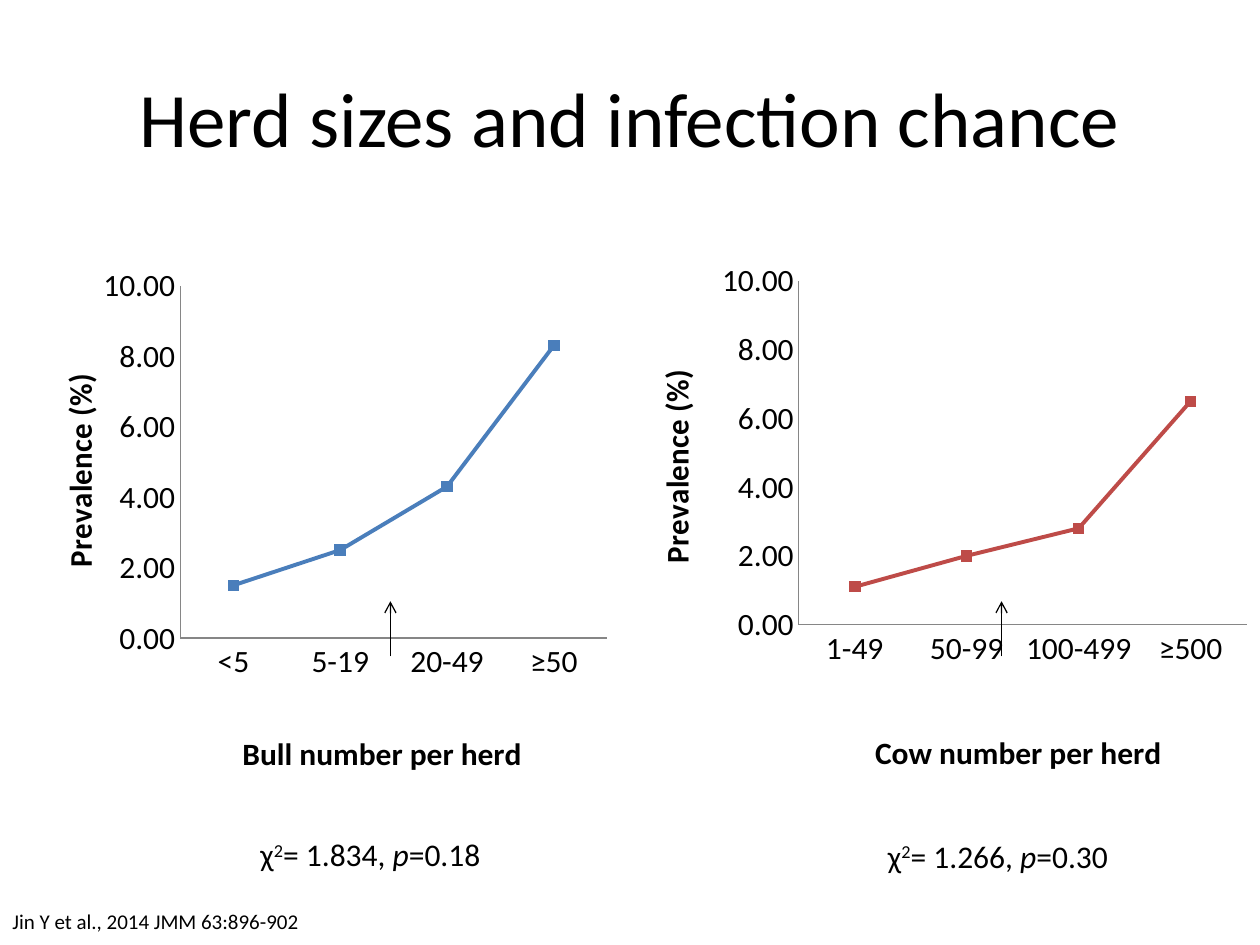
from dataclasses import dataclass
from lxml.etree import SubElement
from pptx import Presentation
from pptx.chart.data import CategoryChartData
from pptx.dml.color import RGBColor
from pptx.enum.chart import XL_CHART_TYPE, XL_MARKER_STYLE, XL_TICK_MARK
from pptx.enum.shapes import MSO_CONNECTOR
from pptx.enum.text import MSO_ANCHOR, MSO_AUTO_SIZE, PP_ALIGN
from pptx.oxml import parse_xml
from pptx.oxml.ns import nsdecls, qn
from pptx.util import Cm, Pt


@dataclass(frozen=True)
class Theme:
    font: str = "Calibri"
    ink: RGBColor = RGBColor(0, 0, 0)
    axis: RGBColor = RGBColor(0x86, 0x86, 0x86)
    blue: RGBColor = RGBColor(0x4A, 0x7E, 0xBB)
    red: RGBColor = RGBColor(0xBE, 0x4B, 0x48)
    head: int = 44
    body: int = 18
    note: int = 12


def place(node, index, x, y, size=None):
    for old in node.findall(qn("c:layout")):
        node.remove(old)
    layout = parse_xml(f"<c:layout {nsdecls('c')}><c:manualLayout/></c:layout>")
    manual = layout[0]
    values = {"xMode": "edge", "yMode": "edge", "x": x, "y": y}
    if size:
        values = {"layoutTarget": "inner", **values, "w": size[0], "h": size[1]}
    for tag, value in values.items():
        SubElement(manual, qn(f"c:{tag}")).set("val", str(value))
    node.insert(index, layout)


class Board:
    def __init__(self, slide, theme):
        self.slide = slide
        self.theme = theme

    def style(self, font, size, bold=None):
        font.name = self.theme.font
        font.size = Pt(size)
        font.color.rgb = self.theme.ink
        font.bold = bold

    def text(self, box, runs, size, title=False):
        frame = self.slide.shapes.add_textbox(*map(Cm, box)).text_frame
        frame.word_wrap = title
        if not title:
            frame.auto_size = MSO_AUTO_SIZE.SHAPE_TO_FIT_TEXT
        para = frame.paragraphs[0]
        self.style(para.font, size)
        if title:
            frame.vertical_anchor = MSO_ANCHOR.MIDDLE
            para.alignment = PP_ALIGN.CENTER
        for words, kind in runs:
            run = para.add_run()
            run.text = words
            if kind == "super":
                run._r.get_or_add_rPr().set("baseline", "30000")
            elif kind == "italic":
                run.font.italic = True

    def arrow(self, x, start, end):
        line = self.slide.shapes.add_connector(
            MSO_CONNECTOR.STRAIGHT, Cm(x), Cm(start), Cm(x), Cm(end))
        line.line.color.rgb = self.theme.ink
        line.line.width = Pt(0.75)
        SubElement(line.line._get_or_add_ln(), qn("a:tailEnd")).set("type", "arrow")
        SubElement(line._element.spPr, qn("a:effectLst"))

    def label(self, axis, words, spot, turn=0):
        title = axis.axis_title
        frame = title.text_frame
        frame.text = words
        self.style(frame.paragraphs[0].font, self.theme.body, True)
        frame._txBody.bodyPr.set("rot", str(turn * 60000))
        place(title._element, 1, *spot)

    def chart(self, box, names, values, color, plot, across, along):
        data = CategoryChartData()
        data.categories = names
        data.add_series("Series 1", values)
        chart = self.slide.shapes.add_chart(
            XL_CHART_TYPE.LINE_MARKERS, *map(Cm, box), data).chart
        chart.has_legend = chart.has_title = False
        self.style(chart.font, self.theme.body)
        place(chart._chartSpace.chart.plotArea, 0, *plot)
        x, y = chart.category_axis, chart.value_axis
        for axis in (x, y):
            axis.has_major_gridlines = False
            axis.major_tick_mark = axis.minor_tick_mark = XL_TICK_MARK.NONE
            axis.format.line.color.rgb = self.theme.axis
            axis.format.line.width = Pt(0.75)
        y.minimum_scale, y.maximum_scale, y.major_unit = 0, 10, 2
        y.tick_labels.number_format = "#,##0.00"
        y.tick_labels.number_format_is_linked = False
        self.label(x, *across)
        self.label(y, "Prevalence (%)", along, -90)
        chart.plots[0].vary_by_categories = False
        line = chart.plots[0].series[0]
        line.smooth = False
        line.format.line.color.rgb = color
        line.format.line.width = Pt(2.25)
        mark = line.marker
        mark.style, mark.size = XL_MARKER_STYLE.SQUARE, 6
        mark.format.fill.solid()
        mark.format.fill.fore_color.rgb = color
        mark.format.line.color.rgb = color


def main():
    deck = Presentation()
    deck.slide_width, deck.slide_height = Cm(25.4), Cm(19.05)
    theme = Theme()
    board = Board(deck.slides.add_slide(deck.slide_layouts[6]), theme)
    board.text((1.27, 0.76, 22.86, 3.18),
               [("Herd sizes and infection chance", "")], theme.head, True)
    board.chart((0.69, 5.21, 12.01, 10.57), ["<5", "5-19", "20-49", "≥50"],
                [1.5, 2.5, 4.3, 8.3], theme.blue, (0.245, 0.053, (0.717, 0.685)),
                ("Bull number per herd", (0.34, 0.91)), (0.03, 0.22))
    board.chart((12.7, 5.11, 12.7, 10.64), ["1-49", "50-99", "100-499", "≥500"],
                [1.1, 2, 2.8, 6.5], theme.red, (0.268, 0.053, (0.711, 0.663)),
                ("Cow number per herd", (0.38, 0.91)), (0.03, 0.22))
    for left, top, chi, chance in ((17.65, 16.74, "1.266", "0.30"),
                                   (5, 16.71, "1.834", "0.18")):
        board.text((left, top, 5.11, 1.02),
                   [("χ", ""), ("2", "super"), (f"= {chi}, ", ""),
                    ("p", "italic"), (f"={chance}", "")], theme.body)
    for x in (7.87, 20.19):
        board.arrow(x, 13.23, 12.12)
    board.text((0, 18.19, 6.38, 0.76),
               [("Jin Y et al., 2014 JMM 63:896-902", "")], theme.note)
    deck.save("out.pptx")


if __name__ == "__main__":
    main()
